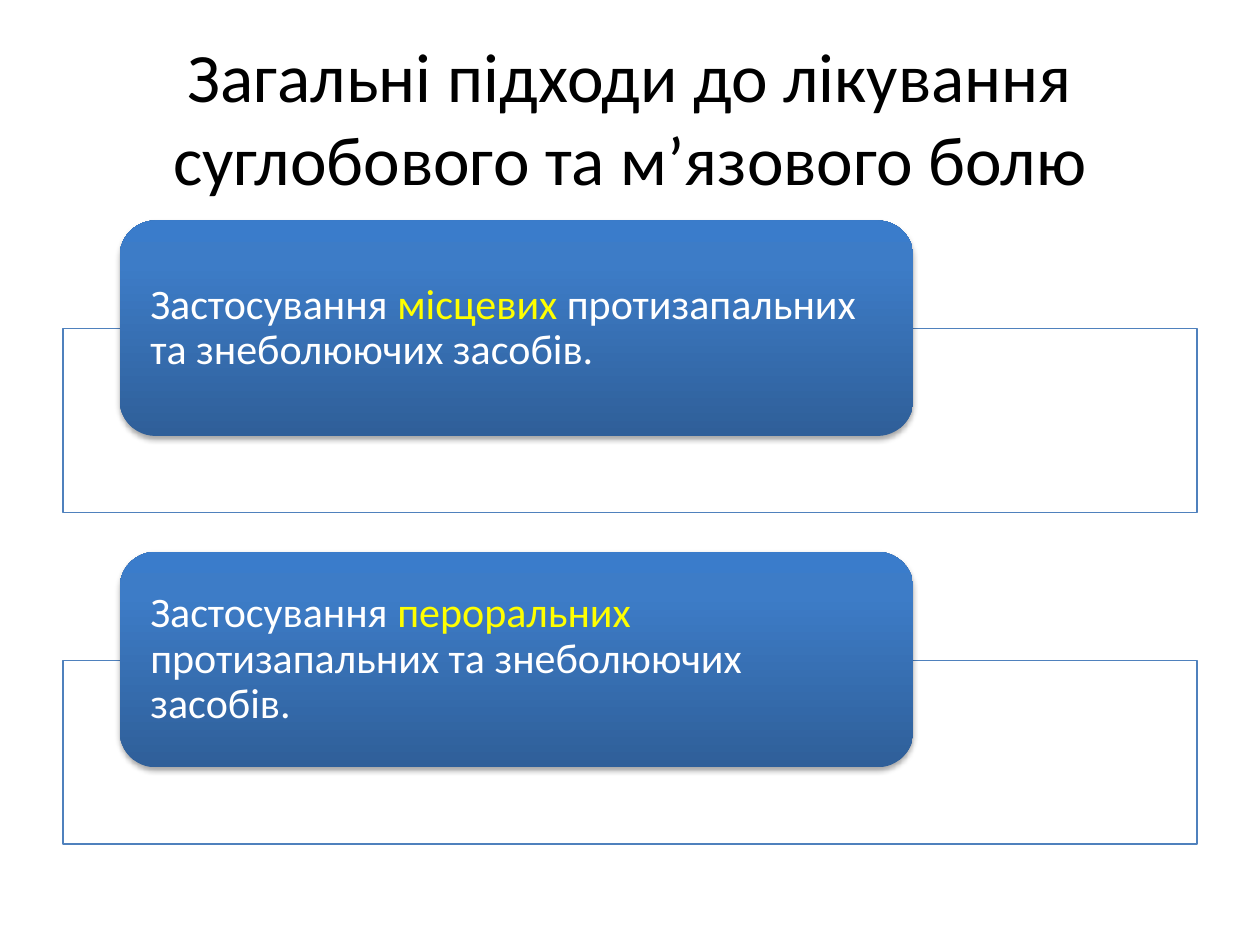
from dataclasses import dataclass

from lxml.etree import SubElement
from pptx import Presentation
from pptx.dml.color import RGBColor
from pptx.enum.shapes import MSO_SHAPE as Shape
from pptx.enum.text import MSO_ANCHOR as Anchor, PP_ALIGN as Align
from pptx.oxml.ns import qn
from pptx.util import Inches, Pt


@dataclass(frozen=True)
class Theme:
    """Colours, font and type sizes of the slide."""
    font: str = "Calibri"
    title_size: float = 39.6
    body_size: float = 24
    ink: str = "000000"
    paper: str = "FFFFFF"
    accent: str = "FFFF00"
    outline: str = "4F81BD"
    gradient: tuple = ((0, "2F5F99"), (80, "3D7CC7"), (100, "3A7CCB"))


def apply(target, values):
    """Set each named attribute on the target."""
    for name, value in values.items():
        setattr(target, name, value)


def add_color(parent, color, alpha=None):
    """Add a colour element with an optional opacity in percent."""
    node = SubElement(parent, qn("a:srgbClr"), val=color)
    if alpha is not None:
        SubElement(node, qn("a:alpha"), val=str(alpha * 1000))


class SlideBuilder:
    """Draws elements on a slide divided into 200 columns and 150 rows."""

    def __init__(self, deck, theme):
        """Add a title-only slide to the deck."""
        self.theme = theme
        self.column = deck.slide_width / 200
        self.row = deck.slide_height / 150
        self.page = deck.slides.add_slide(deck.slide_layouts[5])

    def frame(self, left, top, width, height):
        """Turn grid units into lengths."""
        return (int(left * self.column), int(top * self.row),
                int(width * self.column), int(height * self.row))

    def add_span(self, para, text, size, color):
        """Add a formatted span to a paragraph."""
        span = para.add_run()
        span.text = text
        apply(span.font, {"name": self.theme.font, "size": Pt(size)})
        span.font.color.rgb = RGBColor.from_string(color)

    def title(self, text, *place):
        """Place and fill the title placeholder."""
        box = self.page.shapes.title
        apply(box, dict(zip(("left", "top", "width", "height"), self.frame(*place))))
        apply(box.text_frame, {"word_wrap": True, "vertical_anchor": Anchor.MIDDLE})
        para = box.text_frame.paragraphs[0]
        para.alignment = Align.CENTER
        self.add_span(para, text, self.theme.title_size, self.theme.ink)

    def panel(self, *place):
        """Draw an outlined, nearly opaque rectangle."""
        box = self.page.shapes.add_shape(Shape.RECTANGLE, *self.frame(*place))
        box.shadow.inherit = False
        box.fill.solid()
        box.fill.fore_color.rgb = RGBColor.from_string(self.theme.paper)
        color = box._element.spPr.find(qn("a:solidFill"))[0]
        SubElement(color, qn("a:alpha"), val="90000")
        box.line.width = Pt(0.75)
        box.line.color.rgb = RGBColor.from_string(self.theme.outline)

    def card(self, spans, *place):
        """Draw a shaded rounded card holding coloured spans."""
        box = self.page.shapes.add_shape(Shape.ROUNDED_RECTANGLE, *self.frame(*place))
        box.line.fill.background()
        self.shade(box)
        self.cast_shadow(box)
        apply(box.text_frame, {
            "word_wrap": True, "vertical_anchor": Anchor.MIDDLE,
            "margin_left": Inches(0.16), "margin_right": Inches(0.16),
            "margin_top": 0, "margin_bottom": 0})
        para = box.text_frame.paragraphs[0]
        apply(para, {"alignment": Align.LEFT, "line_spacing": 0.9})
        for text, color in spans:
            self.add_span(para, text, self.theme.body_size, color)

    def shade(self, box):
        """Fill a shape with the theme gradient, rising from the bottom."""
        box.fill.gradient()
        box.fill.gradient_angle = 90
        stops = box._element.spPr.find(qn("a:gradFill")).find(qn("a:gsLst"))
        for stop in list(stops):
            stops.remove(stop)
        for position, color in self.theme.gradient:
            add_color(SubElement(stops, qn("a:gs"), pos=str(position * 1000)), color)

    def cast_shadow(self, box):
        """Give a shape a soft shadow below it."""
        box.shadow.inherit = False
        effects = box._element.spPr.find(qn("a:effectLst"))
        shadow = SubElement(effects, qn("a:outerShdw"), blurRad=str(Pt(3.1)),
                            dist=str(Pt(1.8)), dir="5400000", rotWithShape="0")
        add_color(shadow, self.theme.ink, 35)


def main():
    """Build and save the deck."""
    deck = Presentation()
    apply(deck, {"slide_width": Inches(10), "slide_height": Inches(7.5)})
    theme = Theme()
    builder = SlideBuilder(deck, theme)
    builder.title("Загальні підходи до лікування суглобового та м’язового болю",
                  10, 6, 180, 25)
    for index, route in enumerate(("місцевих ", "пероральних ")):
        top = 35 + index * 52.6
        builder.panel(10, top + 17.2, 180, 29.2)
        spans = (("Застосування ", theme.paper), (route, theme.accent),
                 ("протизапальних та знеболюючих засобів.", theme.paper))
        builder.card(spans, 19, top, 126, 34.2)
    deck.save("out.pptx")


if __name__ == "__main__":
    main()
